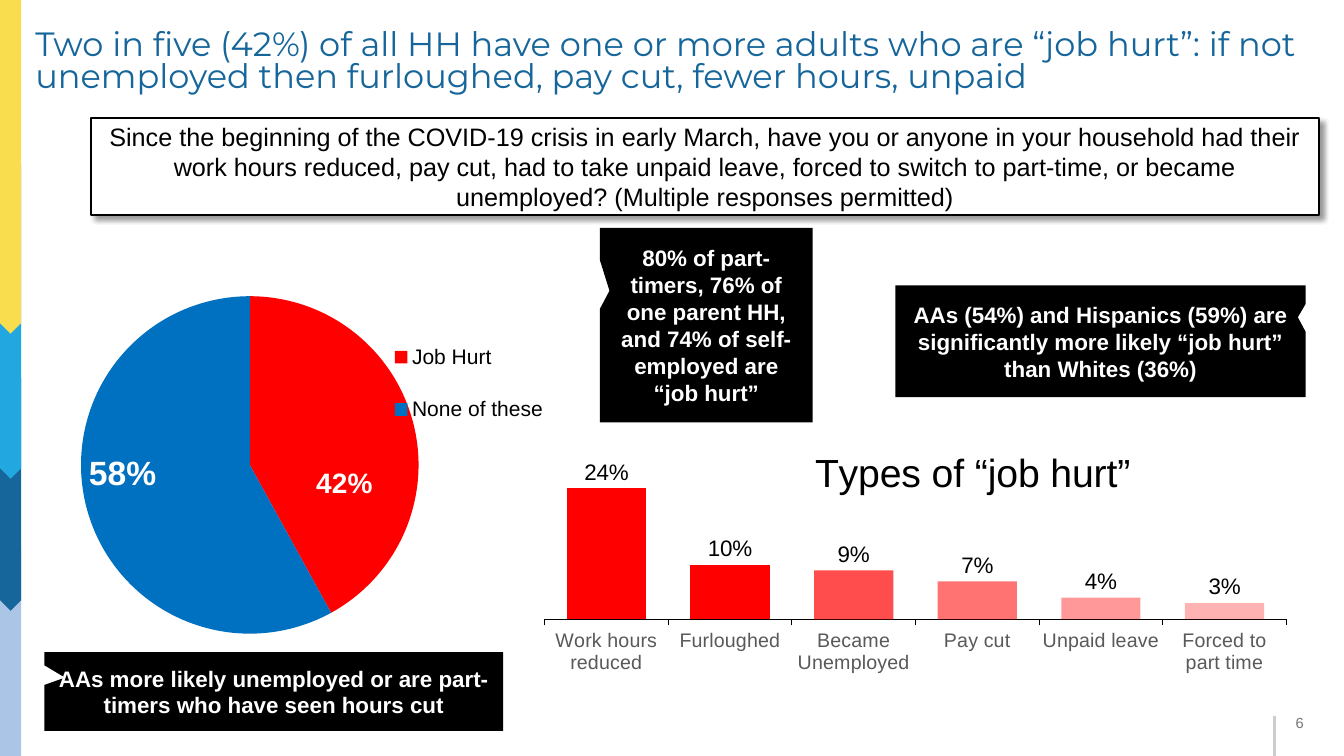
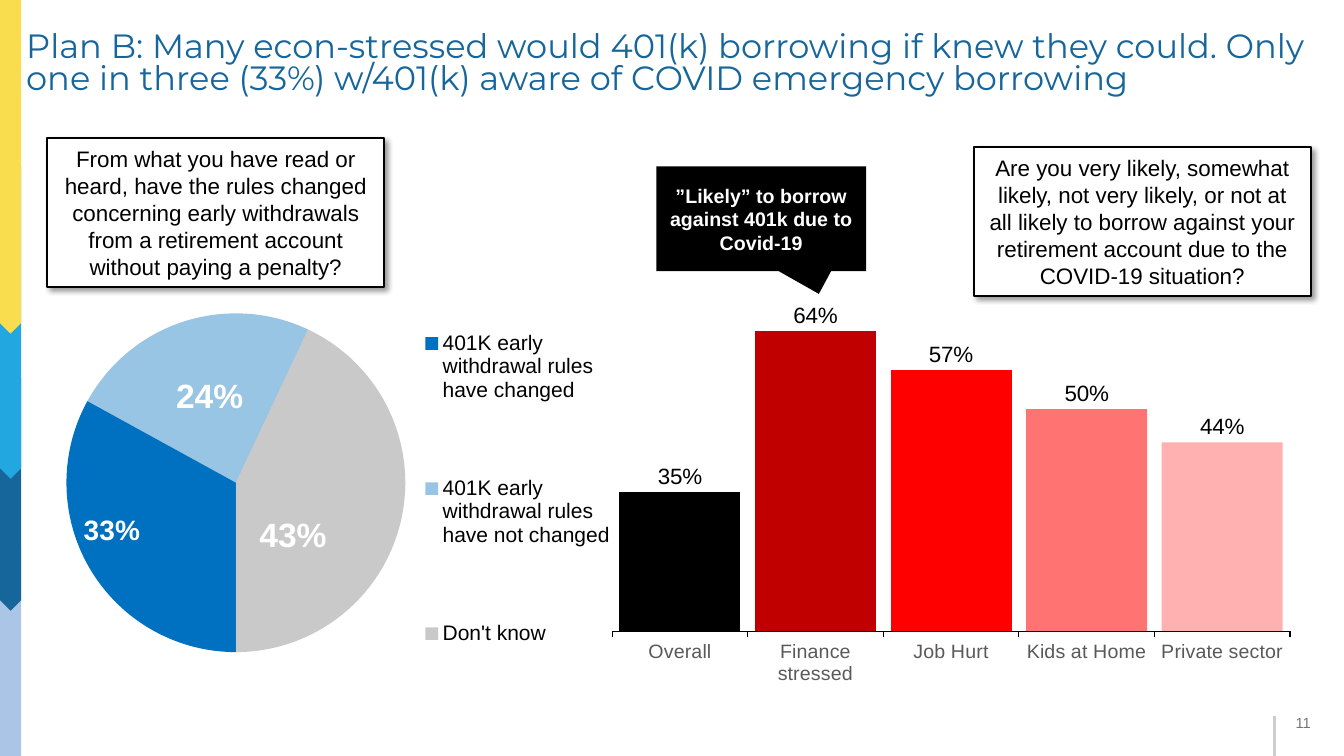
from dataclasses import dataclass
from typing import NamedTuple

from pptx import Presentation
from pptx.chart.data import CategoryChartData
from pptx.dml.color import RGBColor
from pptx.enum.chart import XL_CHART_TYPE as ChartType
from pptx.enum.chart import XL_LABEL_POSITION as LabelPosition
from pptx.enum.chart import XL_LEGEND_POSITION as LegendPosition
from pptx.enum.chart import XL_TICK_MARK as TickMark
from pptx.enum.shapes import MSO_CONNECTOR as Connector
from pptx.enum.shapes import MSO_SHAPE as Preset
from pptx.enum.text import MSO_ANCHOR as Anchor
from pptx.enum.text import MSO_AUTO_SIZE as AutoSize
from pptx.enum.text import PP_ALIGN as Align
from pptx.oxml.ns import qn
from pptx.oxml.xmlchemy import OxmlElement
from pptx.util import Pt

PX = 9144
TITLE_ONLY = 5


@dataclass(frozen=True)
class Theme:
    """Colours, fonts and type sizes of the deck."""
    white: str = "FFFFFF"
    black: str = "000000"
    navy: str = "16669B"
    sky: str = "22A7E0"
    yellow: str = "FADD4E"
    pale: str = "ABC5E7"
    blue: str = "0070C0"
    red: str = "FF0000"
    dark_red: str = "C00000"
    grey: str = "A6A6A6"
    axis_grey: str = "595959"
    number_grey: str = "767676"
    rule_grey: str = "CDCDCD"
    body_font: str = "Arial"
    title_font: str = "Montserrat"
    title_size: float = 24
    chart_title_size: float = 28
    question_size: float = 18
    label_size: float = 16
    legend_size: float = 15
    axis_size: float = 14
    number_size: float = 10.5


THEME = Theme()


class Box(NamedTuple):
    """A rectangle in px."""
    left: int
    top: int
    width: int
    height: int

    def emu(self):
        """Return the four lengths in EMU."""
        return [length * PX for length in self]

    def share_of(self, outer):
        """Return this box as fractions of an outer box."""
        return [round((self.left - outer.left) / outer.width, 3),
                round((self.top - outer.top) / outer.height, 3),
                round(self.width / outer.width, 3),
                round(self.height / outer.height, 3)]


class Slice(NamedTuple):
    """One pie slice with its label size and label shift."""
    name: str
    value: float
    color: str
    alpha: int
    label_size: int
    shift: tuple


class Bar(NamedTuple):
    """One column of a bar chart."""
    name: str
    value: float
    color: str
    alpha: int = 100


def add_child(parent, tag, **attributes):
    """Append an XML element with attributes and return it."""
    child = OxmlElement(tag)
    for name, value in attributes.items():
        child.set(name, str(value))
    parent.append(child)
    return child


def style_font(font, size, color=THEME.black, bold=False, name=THEME.body_font):
    """Set the face, size, weight and colour of a font."""
    font.name, font.size, font.bold = name, Pt(size), bold
    font.color.rgb = RGBColor.from_string(color)


def paint(fill, color, alpha=100):
    """Fill with a solid colour at a given opacity."""
    fill.solid()
    fill.fore_color.rgb = RGBColor.from_string(color)
    if alpha < 100:
        for node in fill._xPr.iter(qn("a:srgbClr")):
            add_child(node, "a:alpha", val=alpha * 1000)


def write(frame, text, size, color=THEME.black, bold=False,
          name=THEME.body_font, align=Align.LEFT):
    """Write one run into the first paragraph of a frame."""
    frame.word_wrap = True
    para = frame.paragraphs[0]
    para.alignment = align
    span = para.add_run()
    span.text = text
    style_font(span.font, size, color, bold, name)
    return para


def add_block(page, preset, box, color):
    """Add a flat filled shape without outline or shadow."""
    shape = page.shapes.add_shape(preset, *box.emu())
    shape.shadow.inherit = False
    paint(shape.fill, color)
    shape.line.fill.background()
    return shape


def add_side_bands(page, box):
    """Stack the coloured arrows down the left edge."""
    base = Box(box.left, box.top + 543, box.width, box.height - 543)
    add_block(page, Preset.RECTANGLE, base, THEME.pale)
    for top, length, color in ((375, 231, THEME.navy), (164, 311, THEME.sky),
                               (0, 331, THEME.yellow)):
        turned = Box(box.left + (box.width - length) // 2,
                     box.top + top + (length - box.width) // 2, length, box.width)
        add_block(page, Preset.PENTAGON, turned, color).rotation = 90


def add_footer(page, box, number):
    """Draw the footer rule and the page number beside it."""
    x, top = box.left * PX, box.top * PX
    rule = page.shapes.add_connector(Connector.STRAIGHT, x, top, x, top + box.height * PX)
    rule.line.color.rgb = RGBColor.from_string(THEME.rule_grey)
    rule.line.width = Pt(2)
    add_child(rule._element.spPr, "a:effectLst")
    label = Box(box.left + 14, box.top - 6, box.width - 14, 25)
    frame = page.shapes.add_textbox(*label.emu()).text_frame
    frame.margin_left = frame.margin_right = 7 * PX
    frame.margin_top = frame.margin_bottom = 4 * PX
    write(frame, number, THEME.number_size, THEME.number_grey)


def add_page(deck, box, title, number):
    """Add a title-only page with its bands, footer and title."""
    page = deck.slides.add_slide(deck.slide_layouts[TITLE_ONLY])
    add_side_bands(page, Box(0, 0, 21, 750))
    add_footer(page, Box(1264, 710, 55, 40), number)
    holder = page.shapes.title
    holder.left, holder.top, holder.width, holder.height = box.emu()
    frame = holder.text_frame
    frame.auto_size = AutoSize.NONE
    frame.vertical_anchor = Anchor.MIDDLE
    para = write(frame, title, THEME.title_size, THEME.navy, name=THEME.title_font)
    para.line_spacing = 0.8
    return page


def add_question(page, box, text, size=THEME.label_size):
    """Add a white framed question with a soft shadow."""
    shape = add_block(page, Preset.RECTANGLE, box, THEME.white)
    paint(shape.line.fill, THEME.black)
    shape.line.width = Pt(1.5)
    effects = shape._element.spPr.find(qn("a:effectLst"))
    shadow = add_child(effects, "a:outerShdw", blurRad=Pt(4), dist=Pt(3),
                       dir=45 * 60000, algn="tl", rotWithShape=0)
    add_child(add_child(shadow, "a:srgbClr", val=THEME.black), "a:alpha", val=40000)
    shape.text_frame.vertical_anchor = Anchor.MIDDLE
    write(shape.text_frame, text, size, align=Align.CENTER)


def add_callout(page, box, text, tip, size=THEME.label_size):
    """Add a black callout whose tip is given as box fractions."""
    shape = add_block(page, Preset.RECTANGULAR_CALLOUT, box, THEME.black)
    shape.adjustments[0], shape.adjustments[1] = tip
    shape.text_frame.vertical_anchor = Anchor.MIDDLE
    write(shape.text_frame, text, size, THEME.white, True, align=Align.CENTER)


def set_layout(parent, index, values, target=None, edge=True):
    """Give a chart part a manual layout of x, y and perhaps w, h."""
    for old in parent.findall(qn("c:layout")):
        parent.remove(old)
    layout = OxmlElement("c:layout")
    manual = add_child(layout, "c:manualLayout")
    if target:
        add_child(manual, "c:layoutTarget", val=target)
    if edge:
        add_child(manual, "c:xMode", val="edge")
        add_child(manual, "c:yMode", val="edge")
    for key, value in zip("xywh", values):
        add_child(manual, f"c:{key}", val=value)
    parent.insert(index, layout)


def add_chart(page, kind, box, plot_box, items):
    """Add a one-series percent chart and colour its points."""
    data = CategoryChartData(number_format="0%")
    data.categories = [item.name for item in items]
    data.add_series("Series 1", [item.value for item in items])
    chart = page.shapes.add_chart(kind, *box.emu(), data).chart
    chart.has_title = chart.has_legend = False
    style_font(chart.font, 10)
    plot_area = chart._chartSpace.chart.plotArea
    set_layout(plot_area, 0, plot_box.share_of(box), "inner")
    series = chart.plots[0].series[0]
    for index, item in enumerate(items):
        paint(series.points[index].format.fill, item.color, item.alpha)
    labels = series.data_labels
    labels.show_value = True
    labels.number_format, labels.number_format_is_linked = "0%", False
    style_font(labels.font, THEME.label_size)
    return chart


def add_pie(page, box, pie_box, legend_box, slices, start=0):
    """Add a pie with a placed legend and shifted white labels."""
    chart = add_chart(page, ChartType.PIE, box, pie_box, slices)
    add_child(chart.plots[0]._element, "c:firstSliceAng", val=start)
    points = chart.plots[0].series[0].points
    for index, item in enumerate(slices):
        label = points[index].data_label
        style_font(label.font, item.label_size, THEME.white, True)
        label.position = LabelPosition.CENTER
        set_layout(label._get_or_add_dLbl(), 1, item.shift, edge=False)
    chart.has_legend = True
    chart.legend.position = LegendPosition.RIGHT
    chart.legend.include_in_layout = False
    style_font(chart.legend.font, THEME.legend_size)
    set_layout(chart.legend._element, 1, legend_box.share_of(box))


def add_columns(page, box, plot_box, bars, limits, gap):
    """Add a column chart with a hidden value axis."""
    chart = add_chart(page, ChartType.COLUMN_CLUSTERED, box, plot_box, bars)
    plot = chart.plots[0]
    plot.vary_by_categories = False
    plot.gap_width = gap
    plot.series[0].data_labels.position = LabelPosition.OUTSIDE_END
    values, names = chart.value_axis, chart.category_axis
    values.minimum_scale, values.maximum_scale = limits
    values.has_major_gridlines = values.visible = False
    names.major_tick_mark = TickMark.OUTSIDE
    style_font(names.tick_labels.font, THEME.axis_size, THEME.axis_grey)
    paint(names.format.line.fill, THEME.black)
    names.format.line.width = Pt(0.75)
    return chart


def build_job_hurt(deck):
    """Build the page on households hurt at work."""
    page = add_page(deck, Box(25, 8, 1308, 109), "Two in five (42%) of all HH have one or more adults who are “job hurt”: if not unemployed then furloughed, pay cut, fewer hours, unpaid", "6")
    add_question(page, Box(90, 117, 1218, 96), "Since the beginning of the COVID-19 crisis in early March, have you or anyone in your household had their work hours reduced, pay cut, had to take unpaid leave, forced to switch to part-time, or became unemployed? (Multiple responses permitted)", THEME.question_size)
    add_pie(page, Box(25, 264, 643, 393), Box(80, 294, 335, 335), Box(378, 314, 174, 133),
            [Slice("Job Hurt", 0.42, THEME.red, 100, 20, (0.02, 0.1)),
             Slice("None of these", 0.58, THEME.blue, 100, 24, (-0.07, -0.03))])
    box = Box(469, 269, 837, 416)
    chart = add_columns(page, box, Box(540, 290, 736, 325),
                        [Bar("Work hours reduced", 0.24, THEME.red),
                         Bar("Furloughed", 0.1, THEME.red),
                         Bar("Became Unemployed", 0.09, THEME.red, 70),
                         Bar("Pay cut", 0.07, THEME.red, 55),
                         Bar("Unpaid leave", 0.04, THEME.red, 40),
                         Bar("Forced to part time", 0.03, THEME.red, 30)], (0, 0.6), 56)
    chart.has_title = True
    write(chart.chart_title.text_frame, "Types of “job hurt”", THEME.chart_title_size, align=Align.CENTER)
    set_layout(chart.chart_title._element, 1, Box(801, 438, 0, 0).share_of(box)[:2])
    for callout, text, tip in (
            (Box(44, 647, 455, 78), "AAs more likely unemployed or are part-timers who have seen hours cut", (-0.455, -0.176)),
            (Box(595, 226, 211, 193), "80% of part-timers, 76% of one parent HH, and 74% of self-employed are “job hurt”", (-0.455, -0.176)),
            (Box(888, 283, 407, 111), "AAs (54%) and Hispanics (59%) are significantly more likely “job hurt” than Whites (36%)", (0.481, -0.214))):
        add_callout(page, callout, text, tip)


def build_plan_b(deck):
    """Build the page on borrowing from retirement accounts."""
    page = add_page(deck, Box(16, 25, 1317, 79), "Plan B: Many econ-stressed would 401(k) borrowing if knew they could. Only one in three (33%) w/401(k) aware of COVID emergency borrowing", "11")
    add_callout(page, Box(651, 165, 208, 104), "”Likely” to borrow against 401k due to Covid-19", (0.275, 0.717), THEME.axis_size)
    add_pie(page, Box(33, 232, 633, 493), Box(66, 311, 336, 336), Box(406, 254, 215, 461),
            [Slice("401K early withdrawal rules have changed", 0.33, THEME.blue, 100, 20, (-0.08, 0.01)),
             Slice("401K early withdrawal rules have not changed", 0.24, THEME.blue, 40, 24, (0, -0.01)),
             Slice("Don't know", 0.43, THEME.grey, 60, 24, (-0.04, 0.07))], 180)
    add_columns(page, Box(601, 263, 679, 416), Box(607, 324, 673, 307),
                [Bar("Overall", 0.35, THEME.black),
                 Bar("Finance stressed", 0.64, THEME.dark_red),
                 Bar("Job Hurt", 0.57, THEME.red),
                 Bar("Kids at Home", 0.5, THEME.red, 55),
                 Bar("Private sector", 0.44, THEME.red, 31)], (0.1, 0.65), 12)
    add_question(page, Box(47, 137, 334, 148), "From what you have read or heard, have the rules changed concerning early withdrawals from a retirement account without paying a penalty?")
    add_question(page, Box(966, 146, 334, 148), "Are you very likely, somewhat likely, not very likely, or not at all likely to borrow against your retirement account due to the COVID-19 situation?")


def main():
    """Build both pages and save the deck."""
    deck = Presentation()
    deck.slide_width, deck.slide_height = 1333 * PX, 750 * PX
    build_job_hurt(deck)
    build_plan_b(deck)
    deck.save("out.pptx")


if __name__ == "__main__":
    main()
